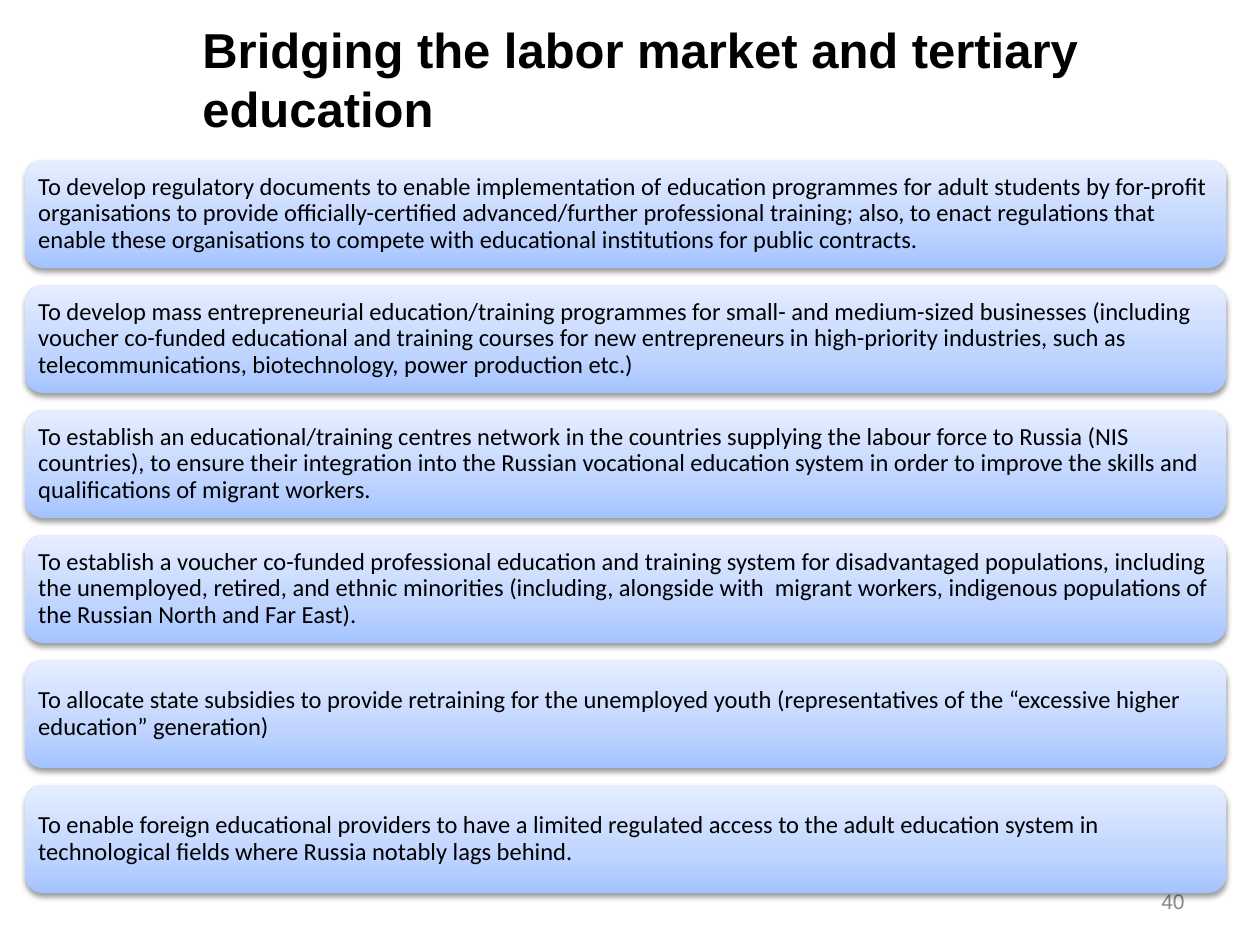
from lxml.etree import SubElement
from pptx import Presentation
from pptx.dml.color import RGBColor
from pptx.enum.shapes import MSO_SHAPE
from pptx.enum.text import MSO_ANCHOR, PP_ALIGN
from pptx.oxml.ns import qn
from pptx.util import Emu, Pt

TITLE = "Bridging the labor market and tertiary education"
SLIDE_NUMBER = "40"
MEASURES = [
    "To develop regulatory documents to enable implementation of education programmes for adult "
    "students by for-profit organisations to provide officially-certified advanced/further "
    "professional training; also, to enact regulations that enable these organisations to compete "
    "with educational institutions for public contracts.",
    "To develop mass entrepreneurial education/training programmes for small- and medium-sized "
    "businesses (including voucher co-funded educational and training courses for new entrepreneurs "
    "in high-priority industries, such as telecommunications, biotechnology, power production etc.)",
    "To establish an educational/training centres network in the countries supplying the labour "
    "force to Russia (NIS countries), to ensure their integration into the Russian vocational "
    "education system in order to improve the skills and qualifications of migrant workers.",
    "To establish a voucher co-funded professional education and training system for disadvantaged "
    "populations, including the unemployed, retired, and ethnic minorities (including, alongside "
    "with  migrant workers, indigenous populations of the Russian North and Far East).",
    "To allocate state subsidies to provide retraining for the unemployed youth (representatives "
    "of the “excessive higher education” generation)",
    "To enable foreign educational providers to have a limited regulated access to the adult "
    "education system in technological fields where Russia notably lags behind.",
]

BLACK = RGBColor(0x00, 0x00, 0x00)
GRAY = RGBColor(0x89, 0x89, 0x89)
GRADIENT = [
    (0, RGBColor(0xA4, 0xC4, 0xFF)),
    (35, RGBColor(0xBF, 0xD4, 0xFF)),
    (100, RGBColor(0xE6, 0xEE, 0xFF)),
]

PX_PER_INCH = 126
SLIDE_WIDTH, SLIDE_HEIGHT = 1260, 945
BAR_LEFT, BAR_TOP, BAR_WIDTH, BAR_HEIGHT = 25, 160, 1201, 108
BAR_PITCH = 125
BAR_INSET = 8
DEGREE = 60000
PERCENT = 1000


def px(length):
    return Emu(round(length * 914400 / PX_PER_INCH))


def write(shape, text, font_name, size, color, bold=False, align=PP_ALIGN.LEFT):
    frame = shape.text_frame
    frame.word_wrap = True
    frame.vertical_anchor = MSO_ANCHOR.MIDDLE
    paragraph = frame.paragraphs[0]
    paragraph.alignment = align
    run = paragraph.add_run()
    run.text = text
    run.font.name = font_name
    run.font.size = Pt(size)
    run.font.bold = bold
    run.font.color.rgb = color
    return paragraph


def add_color(parent, color):
    return SubElement(parent, qn("a:srgbClr"), val=str(color))


def fill_gradient(shape):
    """Fill with all three stops, running from the bottom edge to the top."""
    shape.fill.gradient()
    gradient = shape.fill._xPr.find(qn("a:gradFill"))
    stops = gradient.find(qn("a:gsLst"))
    for stop in list(stops):
        stops.remove(stop)
    for position, color in GRADIENT:
        add_color(SubElement(stops, qn("a:gs"), pos=str(position * PERCENT)), color)
    gradient.find(qn("a:lin")).set("ang", str(270 * DEGREE))


def add_shadow(shape):
    shape.shadow.inherit = False
    effects = shape.element.spPr.find(qn("a:effectLst"))
    shadow = SubElement(effects, qn("a:outerShdw"), blurRad=str(Pt(3.1)), dist=str(Pt(1.6)),
                        dir=str(90 * DEGREE), rotWithShape="0")
    SubElement(add_color(shadow, BLACK), qn("a:alpha"), val=str(38 * PERCENT))


def add_bar(slide, index, text):
    bar = slide.shapes.add_shape(
        MSO_SHAPE.ROUNDED_RECTANGLE, px(BAR_LEFT), px(BAR_TOP + index * BAR_PITCH),
        px(BAR_WIDTH), px(BAR_HEIGHT))
    fill_gradient(bar)
    bar.line.fill.background()
    add_shadow(bar)
    frame = bar.text_frame
    frame.margin_left = frame.margin_right = px(BAR_INSET)
    frame.margin_top = frame.margin_bottom = px(BAR_INSET)
    paragraph = write(bar, text, "Calibri", 14, BLACK)
    paragraph.line_spacing = 0.9


def main():
    presentation = Presentation()
    presentation.slide_width, presentation.slide_height = px(SLIDE_WIDTH), px(SLIDE_HEIGHT)
    slide = presentation.slides.add_slide(presentation.slide_layouts[6])

    title = slide.shapes.add_textbox(px(190), px(19), px(999), px(118))
    write(title, TITLE, "Arial", 28, BLACK, bold=True)
    number = slide.shapes.add_textbox(px(903), px(876), px(294), px(50))
    write(number, SLIDE_NUMBER, "Arial", 12, GRAY, align=PP_ALIGN.RIGHT)

    for index, text in enumerate(MEASURES):
        add_bar(slide, index, text)

    presentation.save("out.pptx")


if __name__ == "__main__":
    main()
